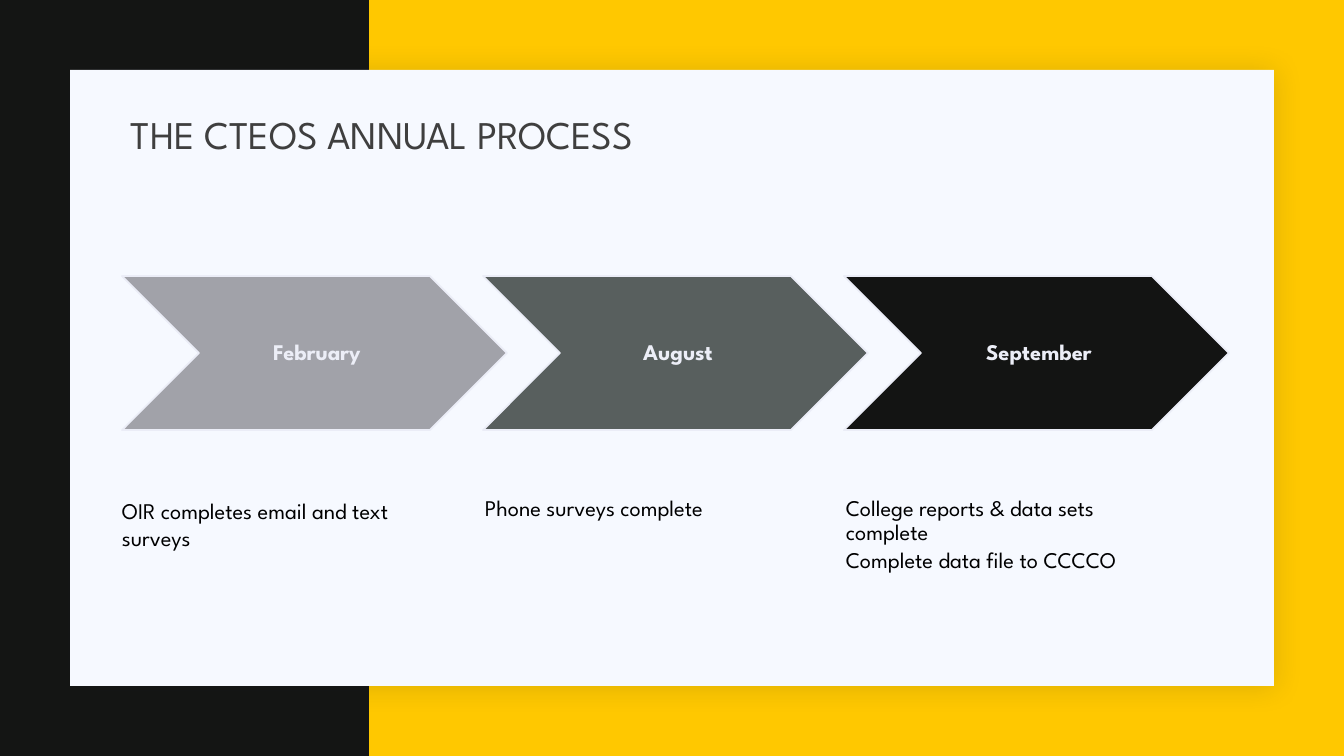
from lxml import etree
from pptx import Presentation
from pptx.dml.color import RGBColor
from pptx.enum.shapes import MSO_SHAPE as Shape
from pptx.enum.text import MSO_ANCHOR as Anchor, MSO_AUTO_SIZE as AutoSize, PP_ALIGN as Align
from pptx.oxml import parse_xml
from pptx.oxml.ns import nsdecls, qn
from pptx.util import Pt

PX = 12192000 / 1344  # EMU per px

YELLOW = RGBColor(0xFF, 0xC8, 0x00)
BLACK = RGBColor(0x00, 0x00, 0x00)
BAND = RGBColor(0x14, 0x15, 0x14)
PANEL = RGBColor(0xF6, 0xF9, 0xFF)
TITLE = RGBColor(0x3F, 0x3F, 0x3F)
OUTLINE = RGBColor(0xEB, 0xED, 0xF7)
LABEL = RGBColor(0xEC, 0xEE, 0xF7)
LIGHT_GREY = RGBColor(0xA1, 0xA2, 0xA9)
DARK_GREY = RGBColor(0x58, 0x5F, 0x5E)
NEAR_BLACK = RGBColor(0x13, 0x14, 0x13)

# Month, chevron colour, caption paragraphs, line spacing, indent
STEPS = [
    ("February", LIGHT_GREY, ["OIR completes email and text surveys"], 1.0, 0),
    ("August", DARK_GREY, ["Phone surveys complete"], 0.9, 2),
    ("September", NEAR_BLACK,
     ["College reports & data sets complete", "Complete data file to CCCCO"], 0.9, 2),
]


def px(*lengths):
    return [round(length * PX) for length in lengths]


class SlideBuilder:
    font = "League Spartan"

    def __init__(self, slide):
        self.slide = slide

    def background(self, color):
        fill = self.slide.background.fill
        fill.solid()
        fill.fore_color.rgb = color

    def shape(self, kind, box, color, outline=None):
        shape = self.slide.shapes.add_shape(kind, *px(*box))
        shape.shadow.inherit = False
        shape.fill.solid()
        shape.fill.fore_color.rgb = color
        if outline is None:
            shape.line.fill.background()
        else:
            shape.line.color.rgb = outline
            shape.line.width = Pt(1.25)
        return shape

    def soft_shadow(self, shape):
        effects = shape._element.spPr.find(qn("a:effectLst"))
        effects.append(parse_xml(
            f'<a:outerShdw {nsdecls("a")} blurRad="254000" dist="25400" dir="2700000" '
            'algn="tl" rotWithShape="0"><a:srgbClr val="1F2125">'
            '<a:alpha val="14000"/></a:srgbClr></a:outerShdw>'))

    def text(self, shape, lines, size, color, insets, anchor=Anchor.TOP,
             align=Align.LEFT, bold=False, spacing=0.9, gap=0, indent=0):
        frame = shape.text_frame
        frame.text = "\n".join(lines)
        frame.word_wrap = True
        frame.auto_size = AutoSize.NONE
        frame.vertical_anchor = anchor
        (frame.margin_left, frame.margin_top,
         frame.margin_right, frame.margin_bottom) = px(*insets)
        for number, paragraph in enumerate(frame.paragraphs):
            paragraph.alignment = align
            paragraph.line_spacing = spacing
            paragraph.space_before = Pt(gap if number else 0)
            if indent:
                paragraph._p.get_or_add_pPr().set("marL", str(px(indent)[0]))
            font = paragraph.font
            font.name, font.size, font.bold = self.font, Pt(size), bold
            font.color.rgb = color

    def title(self, text, box):
        title = self.slide.shapes.title
        title.left, title.top, title.width, title.height = px(*box)
        self.text(title, [text], 28, TITLE, (10, 5, 10, 5), Anchor.MIDDLE)
        self.slide.shapes._spTree.append(title._element)  # bring to front

    def chevron(self, month, box, color):
        chevron = self.shape(Shape.CHEVRON, box, color, OUTLINE)
        self.text(chevron, [month], 16, LABEL, (7, 2, 2, 2), Anchor.MIDDLE,
                  Align.CENTER, bold=True)

    def caption(self, lines, box, spacing, indent):
        caption = self.slide.shapes.add_textbox(*px(*box))
        self.text(caption, lines, 16, BLACK, (0, 47, 20, 0),
                  spacing=spacing, gap=2.4, indent=indent)


def main():
    presentation = Presentation()
    presentation.slide_width, presentation.slide_height = px(1344, 756)
    builder = SlideBuilder(presentation.slides.add_slide(presentation.slide_layouts[5]))

    # Backdrop
    builder.background(YELLOW)
    builder.shape(Shape.RECTANGLE, (0, 0, 369, 756), BAND)
    panel = builder.shape(Shape.RECTANGLE, (70, 70, 1204, 616), PANEL)
    builder.soft_shadow(panel)

    # Process steps
    for index, (month, color, lines, spacing, indent) in enumerate(STEPS):
        left = 122 + 361 * index
        builder.chevron(month, (left, 276, 385, 154), color)
        builder.caption(lines, (left, 450, 308, 153), spacing, indent)

    builder.title("THE CTEOS ANNUAL PROCESS", (121, 104, 1109, 65))
    presentation.save("out.pptx")


if __name__ == "__main__":
    main()
